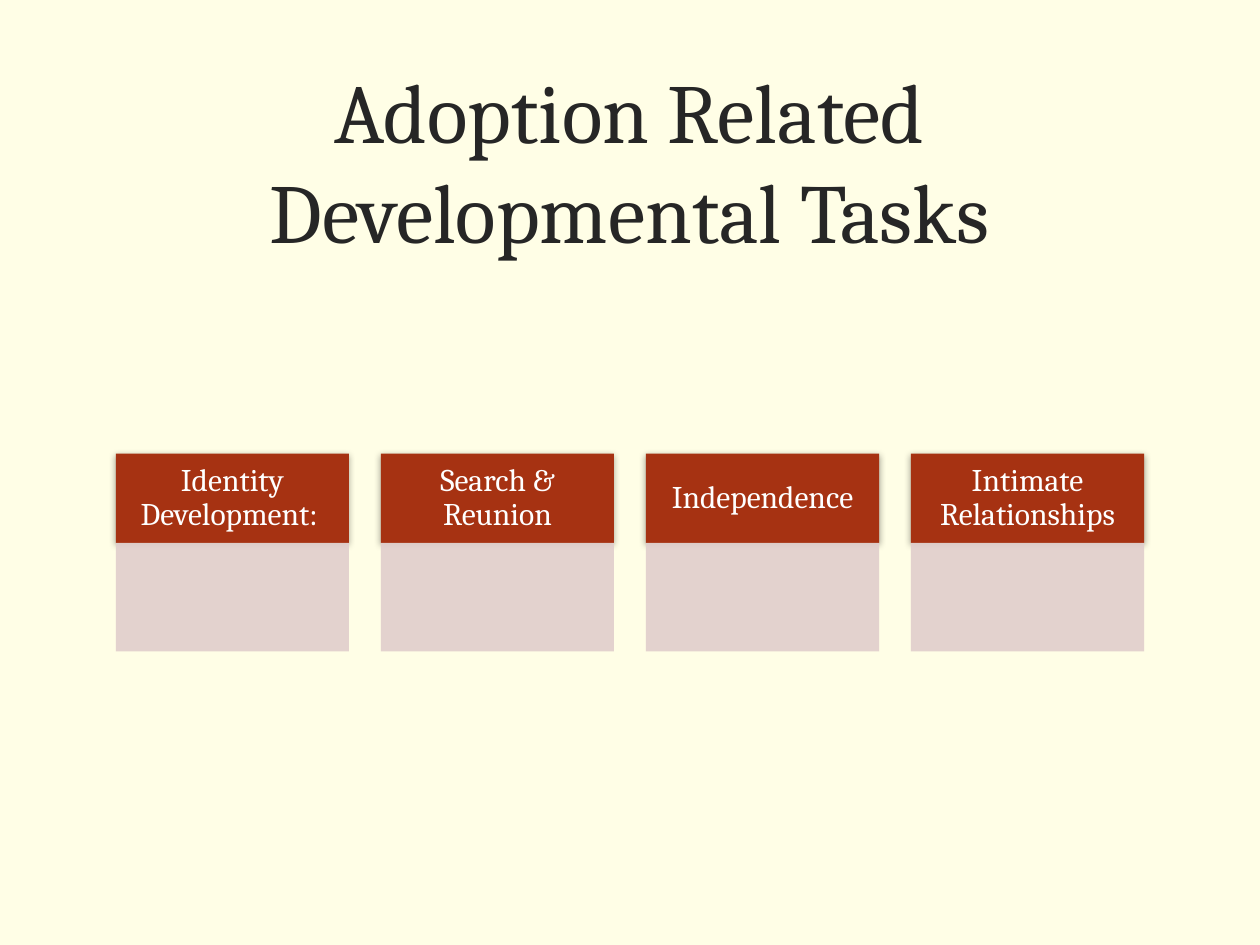
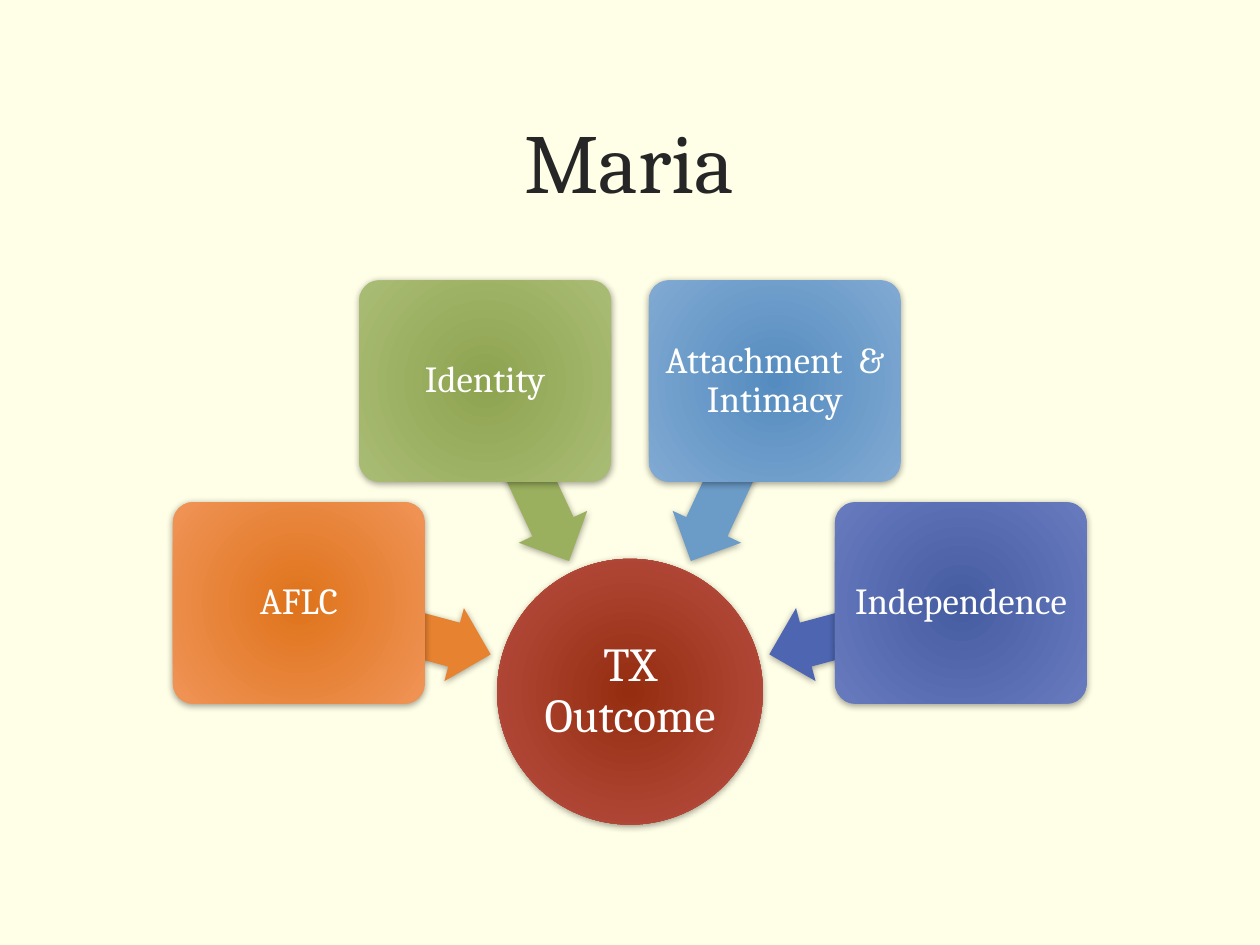
from dataclasses import dataclass
from math import cos, radians, sin

from lxml.etree import SubElement
from pptx import Presentation
from pptx.dml.color import RGBColor
from pptx.enum.shapes import MSO_SHAPE as Shape
from pptx.enum.text import MSO_ANCHOR as Anchor, MSO_AUTO_SIZE as AutoSize, PP_ALIGN as Align
from pptx.oxml import parse_xml
from pptx.oxml.ns import nsdecls, qn
from pptx.util import Inches, Pt


@dataclass(frozen=True)
class Theme:
    font: str = "Cambria"
    background: str = "FFFEE6"
    title: str = "262626"
    light: str = "FFFFFF"
    header: str = "A63212"
    panel: str = "E1CECC"
    hub: tuple = ("952D10", "BA5145")
    title_size: int = 48
    hub_size: int = 27
    factor_size: int = 21
    header_size: int = 18


TASKS = ["Identity Development: ", "Search & Reunion", "Independence", "Intimate Relationships"]

# label, angle around the hub, arrow colour, card gradient (centre, edge)
FACTORS = [
    ("AFLC", 195, "E68230", ("DF731B", "F09457")),
    ("Identity", 245, "9BB05E", ("8EA350", "AABD75")),
    ("Attachment  & Intimacy", 295, "6B9BC7", ("558CBF", "81AAD3")),
    ("Independence", 345, "4E66B2", ("465CA1", "687BBF")),
]


class Slides:
    def __init__(self, theme):
        self.theme = theme
        self.deck = Presentation()
        self.deck.slide_width, self.deck.slide_height = Inches(10), Inches(7.5)
        fill = self.deck.slide_master.background.fill
        fill.solid()
        fill.fore_color.rgb = RGBColor.from_string(theme.background)
        self.page = None

    def new_page(self, title):
        self.page = self.deck.slides.add_slide(self.deck.slide_layouts[5])
        box = self.page.shapes.title
        place = dict(left=0.6, top=0.48, width=8.79, height=1.58)
        for name, value in place.items():
            setattr(box, name, Inches(value))
        self.label(box, title, self.theme.title_size, self.theme.title)

    def label(self, box, text, size, color=None, insets=(0.1, 0.05), spacing=1.0):
        """Put one centred paragraph in a box; insets are (sides, top and bottom)."""
        frame = box.text_frame
        side, edge = map(Inches, insets)
        layout = dict(word_wrap=True, auto_size=AutoSize.NONE, vertical_anchor=Anchor.MIDDLE,
                      margin_left=side, margin_right=side, margin_top=edge, margin_bottom=edge)
        for name, value in layout.items():
            setattr(frame, name, value)
        para = frame.paragraphs[0]
        para.alignment, para.line_spacing = Align.CENTER, spacing
        span = para.add_run()
        span.text = text
        for name, value in dict(name=self.theme.font, size=Pt(size)).items():
            setattr(span.font, name, value)
        span.font.color.rgb = RGBColor.from_string(color or self.theme.light)

    def shape(self, kind, place, fill, shadow=True, alpha=None, adjust=(), rotation=0):
        """Add a borderless shape; a (centre, edge) fill gives a radial gradient."""
        shape = self.page.shapes.add_shape(kind, *map(Inches, place))
        shape.rotation = rotation
        for index, value in enumerate(adjust):
            shape.adjustments[index] = value
        if isinstance(fill, tuple):
            self.radial_fill(shape, *fill)
        else:
            shape.fill.solid()
            shape.fill.fore_color.rgb = RGBColor.from_string(fill)
        if alpha:
            color = shape.element.spPr.find(".//" + qn("a:srgbClr"))
            SubElement(color, qn("a:alpha"), val=str(alpha * 1000))
        shape.line.fill.background()
        shape.shadow.inherit = False
        if shadow:
            self.soft_shadow(shape)
        return shape

    def radial_fill(self, shape, centre, edge):
        shape.element.spPr.append(parse_xml(
            f'<a:gradFill {nsdecls("a")} rotWithShape="1"><a:gsLst>'
            f'<a:gs pos="0"><a:srgbClr val="{centre}"/></a:gs>'
            f'<a:gs pos="100000"><a:srgbClr val="{edge}"/></a:gs></a:gsLst>'
            '<a:path path="circle"><a:fillToRect l="40000" t="100000" r="40000" b="100000"/>'
            '</a:path></a:gradFill>'))

    def soft_shadow(self, shape):
        effects = shape.element.spPr.find(qn("a:effectLst"))
        effects.append(parse_xml(
            f'<a:outerShdw {nsdecls("a")} blurRad="{Pt(4)}" dist="{Pt(1)}" dir="5400000" '
            'rotWithShape="0"><a:srgbClr val="000000"><a:alpha val="37000"/></a:srgbClr>'
            '</a:outerShdw>'))

    def task_column(self, task, left, width):
        top, header_height, panel_height = 3.6, 0.71, 0.86
        header = self.shape(Shape.RECTANGLE, (left, top, width, header_height), self.theme.header)
        self.label(header, task, self.theme.header_size, insets=(0.14, 0.08), spacing=0.9)
        self.shape(Shape.RECTANGLE, (left, top + header_height, width, panel_height),
                   self.theme.panel, shadow=False, alpha=90)

    def hub(self, text, centre, size):
        circle = self.shape(Shape.OVAL, around(centre, size, size), self.theme.hub)
        self.label(circle, text, self.theme.hub_size, insets=(0.02, 0.02), spacing=0.9)

    def factor(self, text, hub, angle, arrow_color, gradient):
        """Add a card on a ring round the hub, with an arrow from it to the hub."""
        self.shape(Shape.LEFT_ARROW, around(on_ring(hub, 1.93, angle), 1.57, 0.6), arrow_color,
                   adjust=(0.6, 0.5), rotation=angle)
        card = self.shape(Shape.ROUNDED_RECTANGLE, around(on_ring(hub, 2.72, angle), 2, 1.6),
                          gradient, adjust=(0.1,))
        self.label(card, text, self.theme.factor_size, insets=(0.04, 0.04), spacing=0.9)


def around(centre, width, height):
    """Left, top, width and height of a box with this centre."""
    return centre[0] - width / 2, centre[1] - height / 2, width, height


def on_ring(centre, radius, angle):
    turn = radians(angle)
    return centre[0] + radius * cos(turn), centre[1] + radius * sin(turn)


def main():
    slides = Slides(Theme())

    slides.new_page("Adoption Related Developmental Tasks")
    left, right, width = 0.92, 9.08, 1.85
    pitch = (right - left - width) / (len(TASKS) - 1)
    for column, task in enumerate(TASKS):
        slides.task_column(task, left + column * pitch, width)

    slides.new_page("Maria")
    hub = (5, 5.49)
    slides.hub("TX Outcome", hub, 2.11)
    for text, angle, arrow_color, gradient in FACTORS:
        slides.factor(text, hub, angle, arrow_color, gradient)

    slides.deck.save("out.pptx")


if __name__ == "__main__":
    main()
